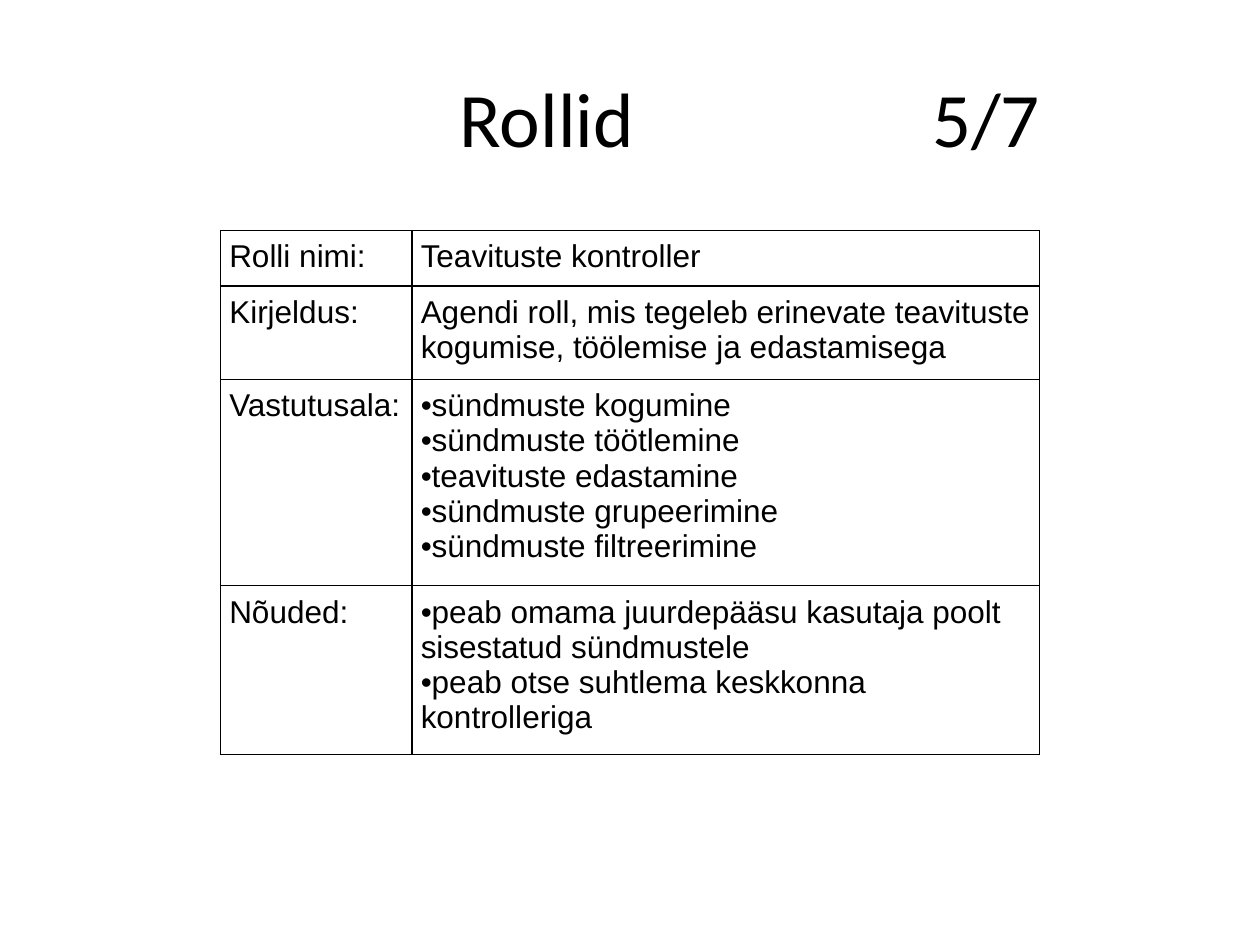
from dataclasses import dataclass

from lxml.etree import SubElement as Sub
from pptx import Presentation
from pptx.dml.color import RGBColor as Rgb
from pptx.enum.text import MSO_ANCHOR as Anchor
from pptx.oxml import parse_xml
from pptx.oxml.ns import nsdecls, qn
from pptx.util import Inches, Pt

WIDE, HIGH = 10, 7.5


@dataclass(frozen=True)
class Theme:
    ink: str = "000000"
    head: str = "Calibri"
    body: str = "Arial"
    big: int = 44
    small: int = 18
    line: float = 0.75
    pad: float = 0.07
    step: float = 0.28  # height of one text line


THEME = Theme()

ROLE = [
    ("Rolli nimi:", ["Teavituste kontroller"], 1),
    ("Kirjeldus:", ["Agendi roll, mis tegeleb erinevate teavituste "
                    "kogumise, töölemise ja edastamisega"], 2),
    ("Vastutusala:", ["sündmuste kogumine", "sündmuste töötlemine",
                      "teavituste edastamine", "sündmuste grupeerimine",
                      "sündmuste filtreerimine"], 5),
    ("Nõuded:", ["peab omama juurdepääsu kasutaja poolt "
                 "sisestatud sündmustele",
                 "peab otse suhtlema keskkonna kontrolleriga"], 4),
]


def place(x, y, w, h):
    """Turn shares of the slide into lengths."""
    return [Inches(part * side)
            for part, side in zip((x, y, w, h), (WIDE, HIGH) * 2)]


def style(item, values):
    for name, value in values.items():
        setattr(item, name, value)


def paint(para, face, size):
    style(para.font, {"name": face, "size": Pt(size)})
    para.font.color.rgb = Rgb.from_string(THEME.ink)


def add_title(slide, words, stops):
    """Set each word at its own tab stop, given in inches."""
    frame = slide.shapes.add_textbox(*place(0.05, 0.04, 0.9, 1 / 6)).text_frame
    style(frame, {"word_wrap": True, "vertical_anchor": Anchor.MIDDLE})
    para = frame.paragraphs[0]
    para.text = "".join("\t" + word for word in words)
    tabs = Sub(para._p.get_or_add_pPr(), qn("a:tabLst"))
    for stop in stops:
        Sub(tabs, qn("a:tab"), pos=str(Inches(stop)), algn="l")
    paint(para, THEME.head, THEME.big)


def add_dot(para):
    props = para._p.get_or_add_pPr()
    style(props, {"marL": 0, "indent": 0})
    Sub(props, qn("a:buFont"), typeface=THEME.body)
    Sub(props, qn("a:buChar"), char="•")


def rule(cell):
    """Draw a thin line on all four sides."""
    props = cell._tc.get_or_add_tcPr()
    for spot, side in enumerate("LRTB"):
        props.insert(spot, parse_xml(
            f'<a:ln{side} {nsdecls("a")} w="{Pt(THEME.line)}"><a:solidFill>'
            f'<a:srgbClr val="{THEME.ink}"/></a:solidFill></a:ln{side}>'))


def fill_cell(cell, lines, dots=False):
    style(cell, {f"margin_{side}": Inches(THEME.pad)
                 for side in ("left", "right", "top", "bottom")})
    cell.fill.background()
    rule(cell)
    cell.text = "\n".join(lines)
    for para in cell.text_frame.paragraphs:
        if dots:
            add_dot(para)
        paint(para, THEME.body, THEME.small)


def add_grid(slide, rows, x, y, widths):
    tall = [count * THEME.step + 2 * THEME.pad for *_, count in rows]
    box = place(x, y, sum(widths), sum(tall) / HIGH)
    table = slide.shapes.add_table(len(rows), len(widths), *box).table
    style(table, {"first_row": False, "horz_banding": False})
    for col, share in zip(table.columns, widths):
        col.width = Inches(share * WIDE)
    for row, high, (label, lines, _) in zip(table.rows, tall, rows):
        row.height = Inches(high)
        fill_cell(row.cells[0], [label])
        fill_cell(row.cells[1], lines, dots=len(lines) > 1)


def main():
    deck = Presentation()
    style(deck, {"slide_width": Inches(WIDE), "slide_height": Inches(HIGH)})
    slide = deck.slides.add_slide(deck.slide_layouts[6])
    add_title(slide, ["Rollid", "5/7"], [3.05, 6.8])
    add_grid(slide, ROLE, 0.175, 0.244, [0.152, 0.498])
    deck.save("out.pptx")


if __name__ == "__main__":
    main()
